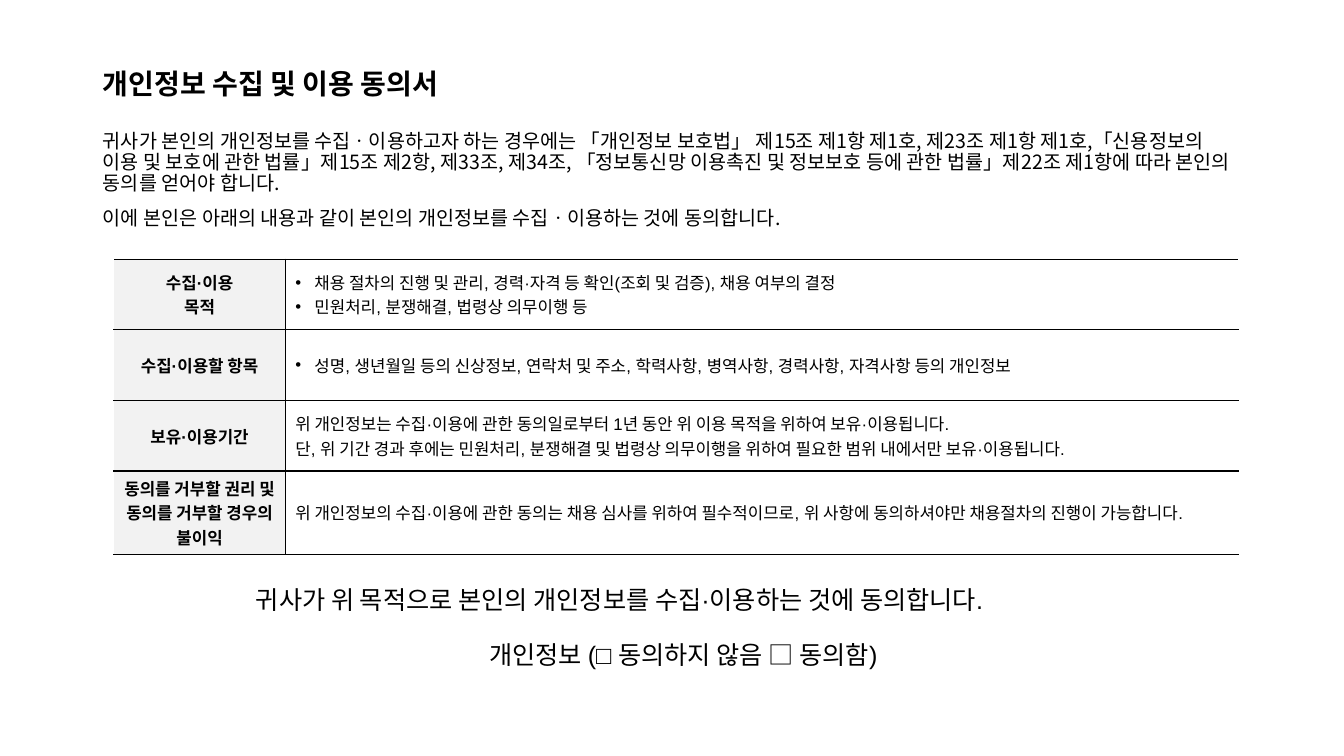
from lxml import etree
from pptx import Presentation
from pptx.dml.color import RGBColor
from pptx.enum.text import MSO_ANCHOR, MSO_AUTO_SIZE, PP_ALIGN
from pptx.oxml.ns import qn
from pptx.util import Cm, Pt

LEFT, CENTER = PP_ALIGN.LEFT, PP_ALIGN.CENTER
TOP, MIDDLE, BOTTOM = MSO_ANCHOR.TOP, MSO_ANCHOR.MIDDLE, MSO_ANCHOR.BOTTOM
NO_AUTOFIT = MSO_AUTO_SIZE.NONE
COLORS = {"text": "000000", "line": "000000", "label": "F2F2F2", "paper": "FFFFFF"}
KOREAN, LATIN = "Noto Sans CJK KR", "Arial"
ROW_HEIGHT = Cm(1.78)
COLUMN_WIDTHS = (Cm(4.32), Cm(24.02))
BULLET_INDENT = Cm(0.48)

TITLE = "개인정보 수집 및 이용 동의서"
INTRODUCTION = [
    "귀사가 본인의 개인정보를 수집ㆍ이용하고자 하는 경우에는 「개인정보 보호법」 "
    "제15조 제1항 제1호, 제23조 제1항 제1호,「신용정보의 이용 및 보호에 관한 법률」"
    "제15조 제2항, 제33조, 제34조, 「정보통신망 이용촉진 및 정보보호 등에 관한 법률」"
    "제22조 제1항에 따라 본인의 동의를 얻어야 합니다.",
    "이에 본인은 아래의 내용과 같이 본인의 개인정보를 수집ㆍ이용하는 것에 동의합니다.",
]
TERMS = [
    (["수집·이용", "목적"],
     ["채용 절차의 진행 및 관리, 경력·자격 등 확인(조회 및 검증), 채용 여부의 결정",
      "민원처리, 분쟁해결, 법령상 의무이행 등"], True),
    (["수집·이용할 항목"],
     ["성명, 생년월일 등의 신상정보, 연락처 및 주소, 학력사항, 병역사항, 경력사항, "
      "자격사항 등의 개인정보"], True),
    (["보유·이용기간"],
     ["위 개인정보는 수집·이용에 관한 동의일로부터 1년 동안 위 이용 목적을 위하여 보유·이용됩니다.",
      "단, 위 기간 경과 후에는 민원처리, 분쟁해결 및 법령상 의무이행을 위하여 "
      "필요한 범위 내에서만 보유·이용됩니다."], False),
    (["동의를 거부할 권리 및 동의를 거부할 경우의 불이익"],
     ["위 개인정보의 수집·이용에 관한 동의는 채용 심사를 위하여 필수적이므로, "
      "위 사항에 동의하셔야만 채용절차의 진행이 가능합니다."], False),
]
CONSENT = [
    "귀사가 위 목적으로 본인의 개인정보를 수집·이용하는 것에 동의합니다.",
    "개인정보 (□ 동의하지 않음 □ 동의함)",
]


def color(name):
    return RGBColor.from_string(COLORS[name])


def set_bullet(para, bulleted):
    properties = para._p.get_or_add_pPr()
    indent = BULLET_INDENT if bulleted else 0
    properties.set("marL", str(indent))
    properties.set("indent", str(-indent))
    if bulleted:
        etree.SubElement(properties, qn("a:buFont"), typeface=LATIN)
        etree.SubElement(properties, qn("a:buChar"), char="•")
    else:
        etree.SubElement(properties, qn("a:buNone"))


def write(frame, texts, size, name, bold=False, align=LEFT, bulleted=False):
    for index, text in enumerate(texts):
        para = frame.paragraphs[0] if index == 0 else frame.add_paragraph()
        para.text = text
        set_bullet(para, bulleted)
        para.alignment = align
        para.font.size = Pt(size)
        para.font.name = name
        para.font.bold = bold
        para.font.color.rgb = color("text")
        etree.SubElement(para.font._element, qn("a:ea"), typeface=KOREAN)


def place(shape, left, top, width, height):
    shape.left, shape.top, shape.width, shape.height = left, top, width, height


def fill_placeholder(shape, texts, size, anchor, bold=False, space_before=0):
    frame = shape.text_frame
    frame.word_wrap = True
    frame.auto_size = NO_AUTOFIT
    frame.vertical_anchor = anchor
    write(frame, texts, size, KOREAN, bold)
    for para in frame.paragraphs:
        para.line_spacing = 0.9
        para.space_before = Pt(space_before)


def set_borders(cell, left, right):
    properties = cell._tc.get_or_add_tcPr()
    sides = {"L": left, "R": right, "T": "line", "B": "line"}
    for side, name in sides.items():
        line = etree.SubElement(properties, qn(f"a:ln{side}"), w=str(Pt(1)))
        solid = etree.SubElement(line, qn("a:solidFill"))
        etree.SubElement(solid, qn("a:srgbClr"), val=COLORS[name])


def format_cell(cell, fill, left, right):
    set_borders(cell, left, right)
    cell.fill.solid()
    cell.fill.fore_color.rgb = color(fill)
    cell.vertical_anchor = MIDDLE


def add_terms(page):
    table = page.shapes.add_table(
        len(TERMS), len(COLUMN_WIDTHS), Cm(2.87), Cm(6.53),
        sum(COLUMN_WIDTHS), ROW_HEIGHT * len(TERMS)).table
    table.first_row = False
    table.horz_banding = False
    for column, width in zip(table.columns, COLUMN_WIDTHS):
        column.width = width
    for index, (label, details, bulleted) in enumerate(TERMS):
        table.rows[index].height = ROW_HEIGHT
        label_cell, detail_cell = table.cell(index, 0), table.cell(index, 1)
        format_cell(label_cell, "label", "paper", "line")
        format_cell(detail_cell, "paper", "line", "paper")
        write(label_cell.text_frame, label, 12, LATIN, True, CENTER)
        write(detail_cell.text_frame, details, 12, LATIN, bulleted=bulleted)


def add_consent(page):
    box = page.shapes.add_textbox(Cm(6.2), Cm(14.6), Cm(22.05), Cm(2.57))
    frame = box.text_frame
    frame.word_wrap = True
    write(frame, CONSENT, 18, LATIN)
    choice = frame.paragraphs[-1]
    choice.alignment = CENTER
    choice.space_before = Pt(18)


def main():
    deck = Presentation()
    deck.slide_width, deck.slide_height = Cm(33.87), Cm(19.05)
    page = deck.slides.add_slide(deck.slide_layouts[1])
    title, body = page.shapes.title, page.placeholders[1]
    place(title, Cm(2.34), Cm(1.02), Cm(29.21), Cm(1.65))
    fill_placeholder(title, [TITLE], 20, BOTTOM, bold=True)
    place(body, Cm(2.34), Cm(3.18), Cm(29.21), Cm(14))
    fill_placeholder(body, INTRODUCTION, 14, TOP, space_before=10)
    add_terms(page)
    add_consent(page)
    deck.save("out.pptx")


if __name__ == "__main__":
    main()
